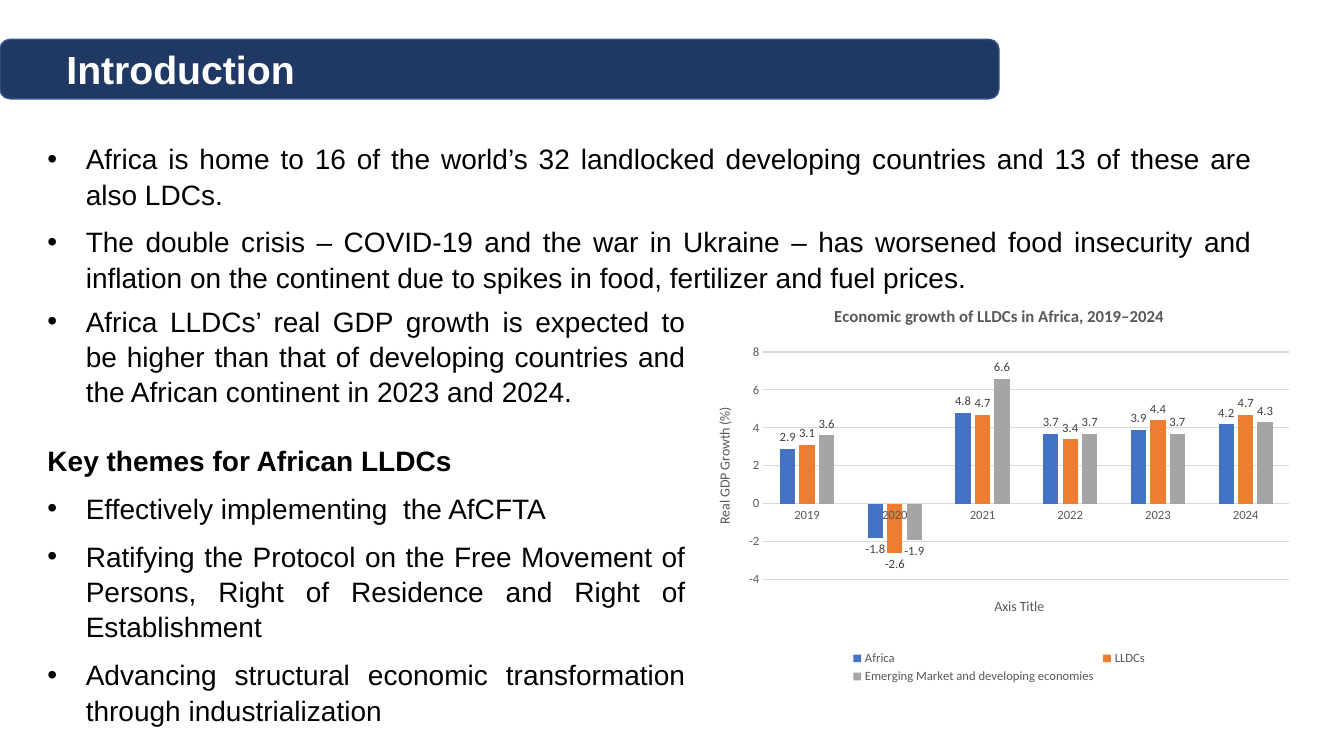
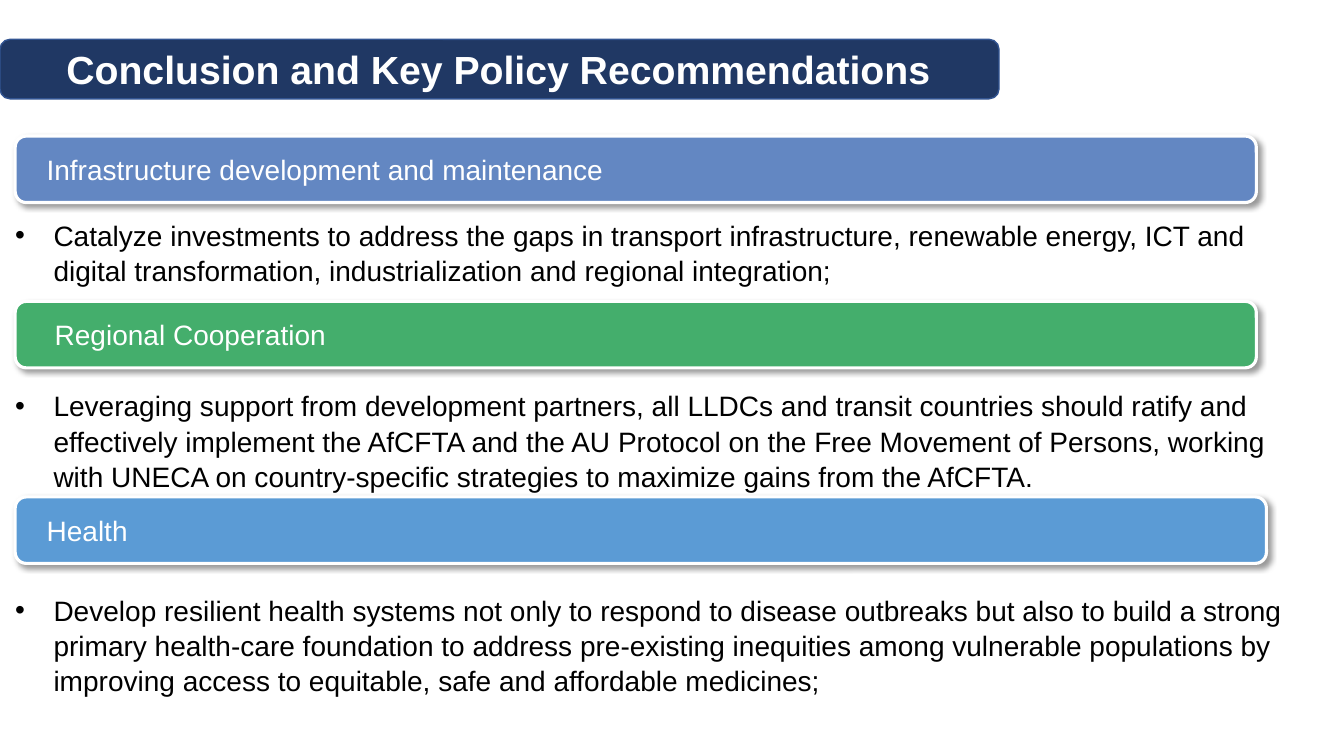
from dataclasses import dataclass

from lxml import etree
from pptx import Presentation
from pptx import util as u
from pptx.chart.data import CategoryChartData
from pptx.dml.color import RGBColor
from pptx.enum import chart as ch, shapes, text
from pptx.oxml import parse_xml
from pptx.oxml.ns import nsdecls, qn


@dataclass(frozen=True)
class Theme:
    font: str = "Arial"
    chart_font: str = "Calibri"
    navy: str = "203864"
    navy_edge: str = "325491"
    white: str = "FFFFFF"
    black: str = "000000"
    gray: str = "595959"
    label_gray: str = "404040"
    rule_gray: str = "D9D9D9"
    series: tuple = ("4472C4", "ED7D31", "A5A5A5")
    title_size: int = 28
    body_size: int = 20
    chart_title_size: int = 12
    axis_title_size: int = 10
    chart_size: int = 9
    line_spacing: float = 1.05


theme = Theme()

deck = Presentation()
deck.slide_width, deck.slide_height = u.Inches(13.33), u.Inches(7.5)


def area(left, top, width, height):
    """Turn percent shares of the slide into lengths."""
    across, down = deck.slide_width / 100, deck.slide_height / 100
    return [u.Emu(round(share * unit)) for share, unit in
            ((left, across), (top, down), (width, across), (height, down))]


def style(font, size, color, name=theme.font, bold=False):
    font.size, font.name, font.bold = u.Pt(size), name, bold
    font.color.rgb = RGBColor.from_string(color)


# Content: headings are (wording, color, top, width, left inset in inches),
# text blocks are (area, alignment, space before, left margin, paragraphs)
JUSTIFY, LEFT = text.PP_ALIGN.JUSTIFY, text.PP_ALIGN.LEFT
KEY_THEMES = "Key themes for African LLDCs"
pages = [
    ("Introduction", [], [
        ((3.23, 18.53, 89.95, 19.6), JUSTIFY, 9, 0.42, [
            "Africa is home to 16 of the world’s 32 landlocked developing countries "
            "and 13 of these are also LDCs.",
            "The double crisis – COVID-19 and the war in Ukraine – has worsened food "
            "insecurity and inflation on the continent due to spikes in food, "
            "fertilizer and fuel prices."]),
        ((3.23, 40, 47.79, 56), JUSTIFY, 9, 0.42, [
            "Africa LLDCs’ real GDP growth is expected to be higher than that of "
            "developing countries and the African continent in 2023 and 2024.",
            KEY_THEMES,
            "Effectively implementing  the AfCFTA",
            "Ratifying the Protocol on the Free Movement of Persons, Right of "
            "Residence and Right of Establishment",
            "Advancing structural economic transformation through "
            "industrialization"])]),
    ("Conclusion and Key Policy Recommendations", [
        ("Infrastructure development and maintenance", "6387C2", 18, 92.35, 0.28),
        ("Regional Cooperation", "44AE6C", 39.87, 92.35, 0.36),
        ("Health", "5B9BD5", 65.73, 93.1, 0.28)], [
        ((1.13, 28.67, 94.45, 8.93), LEFT, 8, 0.38, [
            "Catalyze investments to address the gaps in transport infrastructure, "
            "renewable energy, ICT and digital transformation, industrialization "
            "and regional integration;"]),
        ((1.13, 51.2, 94.45, 13.47), LEFT, 8, 0.38, [
            "Leveraging support from development partners, all LLDCs and transit "
            "countries should ratify and effectively implement the AfCFTA and the "
            "AU Protocol on the Free Movement of Persons, working with UNECA on "
            "country-specific strategies to maximize gains from the AfCFTA."]),
        ((1.13, 78.27, 94.45, 13.47), LEFT, 8, 0.38, [
            "Develop resilient health systems not only to respond to disease "
            "outbreaks but also to build a strong primary health-care foundation "
            "to address pre-existing inequities among vulnerable populations by "
            "improving access to equitable, safe and affordable medicines;"])]),
]

for title, headings, blocks in pages:
    slide = deck.slides.add_slide(deck.slide_layouts[6])

    # Title band and section bands
    bands = [(title, theme.navy, theme.navy_edge, 1, theme.title_size, 0.63,
              (0, 5.2, 74.33, 7.87))]
    bands += [(wording, color, theme.white, 2.25, theme.body_size, inset,
               (1.13, top, width, 8.8))
              for wording, color, top, width, inset in headings]
    for wording, color, edge, edge_width, size, inset, place in bands:
        is_title = wording == title
        band = slide.shapes.add_shape(
            shapes.MSO_SHAPE.ROUNDED_RECTANGLE, *area(*place))
        band.shadow.inherit = False
        band.fill.solid()
        band.fill.fore_color.rgb = RGBColor.from_string(color)
        band.line.color.rgb = RGBColor.from_string(edge)
        band.line.width = u.Pt(edge_width)
        if not is_title:
            effects = band._element.spPr.find(qn("a:effectLst"))
            effects.append(parse_xml(
                f'<a:outerShdw {nsdecls("a")} blurRad="50800" dist="38100" '
                'dir="2700000" algn="tl" rotWithShape="0">'
                f'<a:srgbClr val="{theme.black}"><a:alpha val="40000"/></a:srgbClr>'
                '</a:outerShdw>'))
        frame = band.text_frame
        frame.text = wording
        frame.word_wrap = True
        frame.margin_left = u.Inches(inset)
        frame.vertical_anchor = text.MSO_ANCHOR.MIDDLE
        frame.paragraphs[0].alignment = LEFT
        style(frame.paragraphs[0].runs[0].font, size, theme.white, bold=is_title)

    # Bulleted text
    for place, alignment, space, margin, wordings in blocks:
        frame = slide.shapes.add_textbox(*area(*place)).text_frame
        frame.word_wrap = True
        frame.margin_left = frame.margin_right = 0
        frame.margin_top = frame.margin_bottom = 0
        for number, wording in enumerate(wordings):
            line = frame.add_paragraph() if number else frame.paragraphs[0]
            line.text = wording
            line.alignment = alignment
            line.line_spacing = theme.line_spacing
            is_heading = wording == KEY_THEMES
            if number:
                line.space_before = u.Pt(24 if is_heading else space)
            props = line._p.get_or_add_pPr()
            props.set("marL", str(u.Inches(0.04 if is_heading else margin)))
            props.set("indent", str(0 if is_heading else u.Inches(-0.38)))
            if not is_heading:
                etree.SubElement(props, qn("a:buFont")).set("typeface", theme.font)
                etree.SubElement(props, qn("a:buChar")).set("char", "•")
            style(line.runs[0].font, theme.body_size, theme.black, bold=is_heading)

# Growth chart on the first slide
growth = CategoryChartData()
growth.categories = [str(year) for year in range(2019, 2025)]
growth.add_series("Africa", (2.9, -1.8, 4.8, 3.7, 3.9, 4.2))
growth.add_series("LLDCs", (3.1, -2.6, 4.7, 3.4, 4.4, 4.7))
growth.add_series("Emerging Market and developing economies",
                  (3.6, -1.9, 6.6, 3.7, 3.7, 4.3))
chart = deck.slides[0].shapes.add_chart(
    ch.XL_CHART_TYPE.COLUMN_CLUSTERED, *area(51.84, 38.13, 45.01, 52.8),
    growth).chart
style(chart.font, theme.chart_size, theme.gray, theme.chart_font)

# Chart and axis titles
years, percent = chart.category_axis, chart.value_axis
for owner, wording, size, bold in (
        (chart, "Economic growth of LLDCs in Africa, 2019–2024",
         theme.chart_title_size, True),
        (years, "Axis Title", theme.axis_title_size, False),
        (percent, "Real GDP Growth (%)", theme.axis_title_size, False)):
    owner.has_title = True
    heading = owner.chart_title if owner is chart else owner.axis_title
    heading.text_frame.text = wording
    style(heading.text_frame.paragraphs[0].runs[0].font, size, theme.gray,
          theme.chart_font, bold)

# Axes and gridlines
percent.minimum_scale, percent.maximum_scale, percent.major_unit = -4, 8, 2
percent.has_major_gridlines = True
percent.format.line.fill.background()
for rule in (years.format.line, percent.major_gridlines.format.line):
    rule.color.rgb = RGBColor.from_string(theme.rule_gray)
    rule.width = u.Pt(0.75)
for axis in (years, percent):
    axis.major_tick_mark = axis.minor_tick_mark = ch.XL_TICK_MARK.NONE
    style(axis.tick_labels.font, theme.chart_size, theme.gray, theme.chart_font)

# Columns and their labels
columns = chart.plots[0]
columns.vary_by_categories = False
columns.gap_width, columns.overlap = 219, -27
for series, color in zip(columns.series, theme.series):
    series.invert_if_negative = False
    series.format.fill.solid()
    series.format.fill.fore_color.rgb = RGBColor.from_string(color)
    labels = series.data_labels
    labels.show_value = True
    labels.number_format, labels.number_format_is_linked = "0.0", False
    labels.position = ch.XL_LABEL_POSITION.OUTSIDE_END
    style(labels.font, theme.chart_size, theme.label_gray, theme.chart_font)

# Legend, and shares of the chart given to plot and legend
chart.has_legend = True
chart.legend.position = ch.XL_LEGEND_POSITION.BOTTOM
chart.legend.include_in_layout = False
style(chart.legend.font, theme.chart_size, theme.gray, theme.chart_font)
plot_area = chart._chartSpace.chart.plotArea
for part, index, target, shares in (
        (plot_area, 0, '<c:layoutTarget val="inner"/>', (0.11, 0.16, 0.87, 0.57)),
        (chart.legend._element, 1, "", (0.25, 0.9, 0.5, 0.1))):
    for old in part.findall(qn("c:layout")):
        part.remove(old)
    modes = '<c:xMode val="edge"/><c:yMode val="edge"/>'
    sizes = "".join(f'<c:{side} val="{share}"/>' for side, share in zip("xywh", shares))
    part.insert(index, parse_xml(
        f'<c:layout {nsdecls("c")}><c:manualLayout>{target}{modes}{sizes}'
        '</c:manualLayout></c:layout>'))

deck.save("out.pptx")
